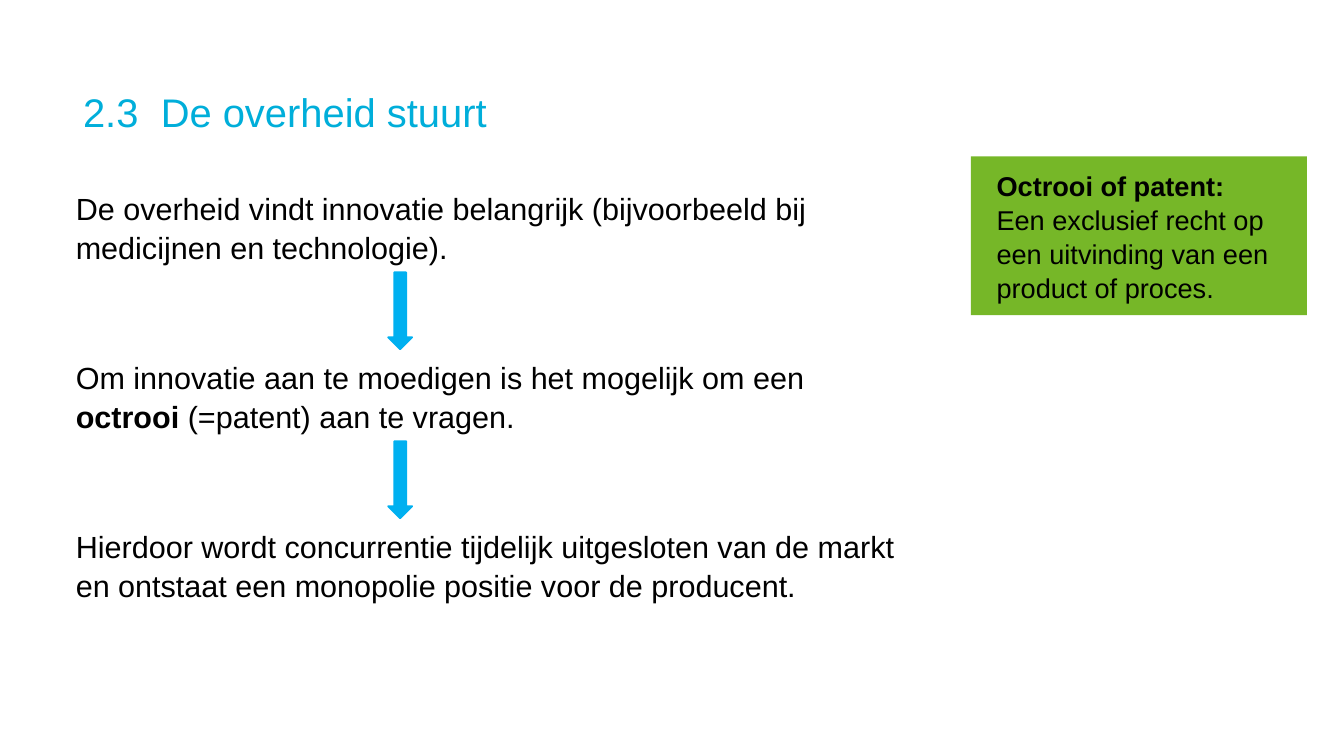
from pptx import Presentation
from pptx import util as u
from pptx.dml.color import RGBColor
from pptx.enum import shapes, text
from pptx.oxml.ns import qn

BLACK = RGBColor(0x00, 0x00, 0x00)
CYAN = RGBColor(0x00, 0xAE, 0xDA)
ARROW_BLUE = RGBColor(0x00, 0xB0, 0xF0)
GREEN = RGBColor(0x76, 0xB7, 0x28)


class SlideBuilder:
    font_name = "Arial"
    line_spacing = 1.05

    def __init__(self, slide):
        self.slide = slide

    def place(self, shape, left, top, width, height):
        shape.left, shape.top = u.Cm(left), u.Cm(top)
        shape.width, shape.height = u.Cm(width), u.Cm(height)

    def set_frame(self, shape, inset_x, inset_y, anchor):
        frame = shape.text_frame
        frame.word_wrap = True
        frame.auto_size = text.MSO_AUTO_SIZE.NONE
        frame.vertical_anchor = anchor
        frame.margin_left = frame.margin_right = u.Cm(inset_x)
        frame.margin_top = frame.margin_bottom = u.Cm(inset_y)
        return frame

    def add_runs(self, paragraph, runs, size, color=BLACK):
        """Add (wording, bold) runs to a left-aligned paragraph."""
        paragraph.alignment = text.PP_ALIGN.LEFT
        paragraph.space_before = u.Pt(0)
        paragraph.line_spacing = self.line_spacing
        for wording, bold in runs:
            run = paragraph.add_run()
            run.text = wording
            run.font.name = self.font_name
            run.font.size = u.Pt(size)
            run.font.bold = bold
            run.font.color.rgb = color

    def title(self, number, wording):
        shape = self.slide.shapes.title
        self.place(shape, 3.45, 3.45, 48.9, 2.31)
        frame = self.set_frame(shape, 0, 0, text.MSO_ANCHOR.MIDDLE)
        paragraph = frame.paragraphs[0]
        self.add_runs(paragraph, [(f"{number}\t{wording}", False)], 47, CYAN)
        # Tab stop between chapter number and heading
        properties = paragraph._p.get_or_add_pPr()
        tabs = properties.makeelement(qn("a:tabLst"), {})
        tabs.append(tabs.makeelement(
            qn("a:tab"), {"pos": str(u.Cm(3.23)), "algn": "l"}))
        properties.append(tabs)

    def definition(self, paragraphs):
        shape = self.slide.placeholders[1]
        self.place(shape, 40.34, 6.5, 13.97, 6.6)
        shape.fill.solid()
        shape.fill.fore_color.rgb = GREEN
        frame = self.set_frame(shape, 1.07, 1.07, text.MSO_ANCHOR.MIDDLE)
        for index, runs in enumerate(paragraphs):
            paragraph = frame.add_paragraph() if index else frame.paragraphs[0]
            self.add_runs(paragraph, runs, 32)
            properties = paragraph._p.get_or_add_pPr()
            properties.set("marL", "0")
            properties.set("indent", "0")
            properties.append(properties.makeelement(qn("a:buNone"), {}))

    def statement(self, top, runs):
        shape = self.slide.shapes.add_textbox(
            u.Cm(2.9), u.Cm(top), u.Cm(35.4), u.Cm(3.33))
        frame = self.set_frame(shape, 0.25, 0.13, text.MSO_ANCHOR.TOP)
        self.add_runs(frame.paragraphs[0], runs, 36)

    def arrow(self, top):
        shape = self.slide.shapes.add_shape(
            shapes.MSO_SHAPE.DOWN_ARROW,
            u.Cm(16.13), u.Cm(top), u.Cm(1), u.Cm(3.2))
        shape.shadow.inherit = False
        shape.fill.solid()
        shape.fill.fore_color.rgb = ARROW_BLUE
        shape.line.color.rgb = ARROW_BLUE
        shape.line.width = u.Pt(2)


def main():
    presentation = Presentation()
    presentation.slide_width, presentation.slide_height = u.Cm(55.85), u.Cm(31.42)
    slide = presentation.slides.add_slide(presentation.slide_layouts[1])
    builder = SlideBuilder(slide)

    # Heading and definition
    builder.title("2.3", "De overheid stuurt")
    builder.definition([
        [("Octrooi of patent:", True)],
        [("Een exclusief recht op een uitvinding van een product of proces.", False)],
    ])

    # Chain of statements, each after the first led in by an arrow
    statements = [
        [("De overheid vindt innovatie belangrijk (bijvoorbeeld bij "
          "medicijnen en technologie).", False)],
        [("Om innovatie aan te moedigen is het mogelijk om een ", False),
         ("octrooi", True),
         (" (=patent) aan te vragen.", False)],
        [("Hierdoor wordt concurrentie tijdelijk uitgesloten van de markt "
          "en ontstaat een monopolie positie voor de producent.", False)],
    ]
    first_top, pitch, arrow_rise = 7.7, 7.02, 3.4
    for index, runs in enumerate(statements):
        top = first_top + index * pitch
        builder.statement(top, runs)
        if index:
            builder.arrow(top - arrow_rise)

    presentation.save("out.pptx")


if __name__ == "__main__":
    main()
